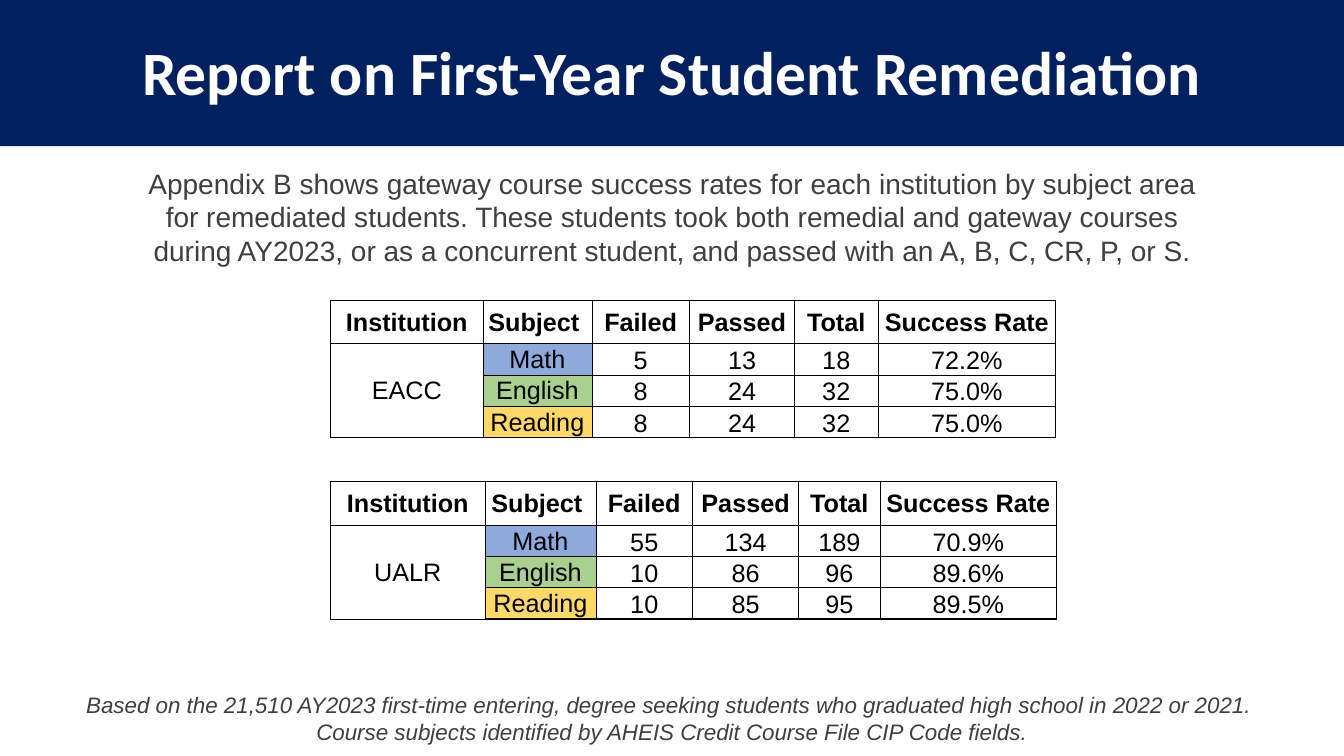
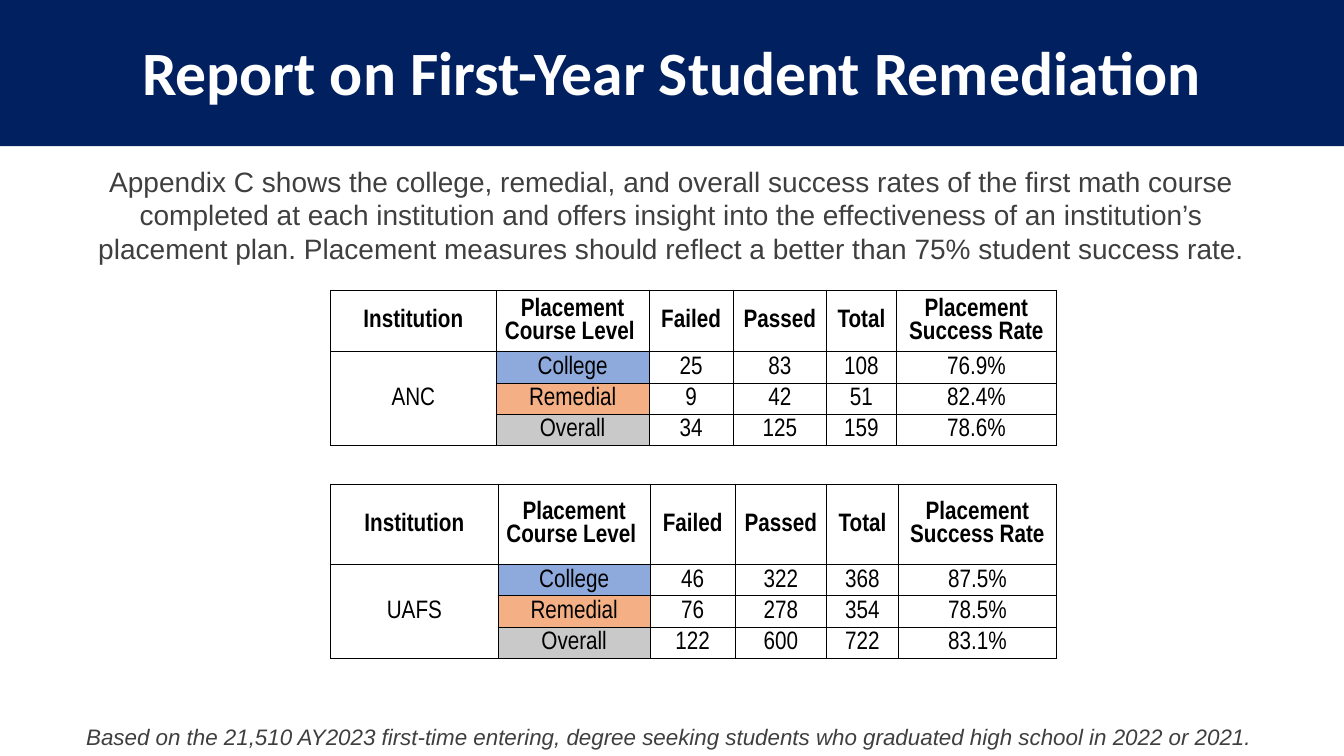
from dataclasses import dataclass

from lxml import etree
from pptx import Presentation
from pptx.dml.color import RGBColor
from pptx.enum.shapes import MSO_SHAPE
from pptx.enum.text import MSO_ANCHOR, PP_ALIGN
from pptx.oxml.ns import qn
from pptx.util import Inches, Pt

RECT = MSO_SHAPE.RECTANGLE
TOP, MIDDLE, BOTTOM = MSO_ANCHOR.TOP, MSO_ANCHOR.MIDDLE, MSO_ANCHOR.BOTTOM
CENTER = PP_ALIGN.CENTER


@dataclass(frozen=True)
class Theme:
    navy: str = "002060"
    white: str = "FFFFFF"
    gray: str = "3F3F3F"
    black: str = "000000"
    blue: str = "8EA9DB"
    green: str = "A9D08E"
    gold: str = "FFD966"
    orange: str = "F4B084"
    silver: str = "C9C9C9"
    sans: str = "Arial"
    narrow: str = "Arial Narrow"
    head: str = "Calibri"
    title: int = 44
    body: int = 20
    cell: int = 18
    note: int = 16
    thin: float = 0.5
    thick: float = 1


THEME = Theme()
WIDE, HIGH = 13.33, 7.5
LEFT = 3.28
PAD = {"margin_left": 0.01, "margin_right": 0.01, "margin_top": 0.01, "margin_bottom": 0}
INSET = {"margin_left": 0.1, "margin_right": 0.1, "margin_top": 0.05, "margin_bottom": 0}
TITLE = {"name": THEME.head, "size": Pt(THEME.title), "bold": True}
BODY = {"name": THEME.sans, "size": Pt(THEME.body)}
NOTE = {"name": THEME.sans, "size": Pt(THEME.note), "italic": True}
COHORT = ("Based on the 21,510 AY2023 first-time entering, degree seeking students "
          "who graduated high school in 2022 or 2021. ")


def apply(item, values):
    for key, value in values.items():
        setattr(item, key, value)


def inset(item, values):
    apply(item, {key: Inches(value) for key, value in values.items()})


def write(frame, lines, look, color):
    for index, line in enumerate(lines):
        para = frame.add_paragraph() if index else frame.paragraphs[0]
        para.alignment = CENTER
        run = para.add_run()
        run.text = line
        apply(run.font, look)
        run.font.color.rgb = RGBColor.from_string(color)


def add_band(slide, box, text):
    band = slide.shapes.add_shape(RECT, *map(Inches, box))
    band.shadow.inherit = False
    band.fill.solid()
    band.fill.fore_color.rgb = RGBColor.from_string(THEME.navy)
    band.line.fill.background()
    frame = band.text_frame
    apply(frame, {"word_wrap": True, "vertical_anchor": MIDDLE})
    inset(frame, INSET)
    write(frame, [text], TITLE, THEME.white)
    frame.paragraphs[0].line_spacing = 0.9


def add_text(slide, box, lines, look):
    frame = slide.shapes.add_textbox(*map(Inches, box)).text_frame
    apply(frame, {"word_wrap": True, "vertical_anchor": TOP})
    write(frame, lines, look, THEME.gray)


def add_edge(cell, side, width):
    props = cell._tc.get_or_add_tcPr()
    line = etree.SubElement(props, qn(f"a:ln{side}"), w=str(Pt(width)))
    fill = etree.SubElement(line, qn("a:solidFill"))
    etree.SubElement(fill, qn("a:srgbClr"), val=THEME.black)


def add_grid(slide, top, sizes, kind, school, data):
    heads, levels = kind["heads"], kind["levels"]
    rows = [heads] + [[school if not index else "", name, *values]
                      for index, ((name, _), values) in enumerate(zip(levels, data))]
    tall = [sizes["head"]] + [kind["row"]] * len(levels)
    box = LEFT, top, sum(sizes["cols"]), sum(tall)
    grid = slide.shapes.add_table(len(rows), len(heads), *map(Inches, box)).table
    apply(grid, {"first_row": False, "horz_banding": False})
    for col, width in zip(grid.columns, sizes["cols"]):
        col.width = Inches(width)
    for row, height in zip(grid.rows, tall):
        row.height = Inches(height)
    last, end = len(rows) - 1, len(heads) - 1
    for y, row in enumerate(rows):
        for x, text in enumerate(row):
            cell = grid.cell(y, x)
            heavy = {"L": x == 0, "R": x == end, "T": y < 2, "B": y in (0, last)}
            for side, bold in heavy.items():
                add_edge(cell, side, kind["edge"] if bold else THEME.thin)
            if y and x == 1:
                cell.fill.solid()
                cell.fill.fore_color.rgb = RGBColor.from_string(levels[y - 1][1])
            else:
                cell.fill.background()
            inset(cell, PAD)
            cell.vertical_anchor = kind["anchor"] if y and x > 1 else MIDDLE
            if text:
                look = {"name": kind["font"], "size": Pt(THEME.cell), "bold": y == 0}
                write(cell.text_frame, [text], look, THEME.black)
    grid.cell(1, 0).merge(grid.cell(last, 0))


def add_page(deck, page):
    slide = deck.slides.add_slide(deck.slide_layouts[6])
    add_band(slide, (0, 0, WIDE, 1.45), "Report on First-Year Student Remediation")
    add_text(slide, page["box"], [page["intro"]], BODY)
    for top, sizes, school, data in page["grids"]:
        add_grid(slide, top, sizes, page["kind"], school, data)
    add_text(slide, page["foot"], page["notes"], NOTE)


SUBJECT = {
    "heads": ["Institution", "Subject ", "Failed", "Passed", "Total", "Success Rate"],
    "levels": [("Math", THEME.blue), ("English", THEME.green), ("Reading", THEME.gold)],
    "row": 0.24, "edge": THEME.thick, "font": THEME.sans, "anchor": BOTTOM,
}
PLACING = {
    "heads": ["Institution", "Placement Course Level ", "Failed", "Passed", "Total",
              "Placement Success Rate"],
    "levels": [("College", THEME.blue), ("Remedial", THEME.orange),
               ("Overall", THEME.silver)],
    "row": 0.31, "edge": THEME.thin, "font": THEME.narrow, "anchor": MIDDLE,
}
PAGES = [
    {
        "box": (1.32, 1.6, 10.7, 1.41),
        "intro": "Appendix B shows gateway course success rates for each institution by "
                 "subject area for remediated students. These students took both remedial "
                 "and gateway courses during AY2023, or as a concurrent student, and passed "
                 "with an A, B, C, CR, P, or S.",
        "kind": SUBJECT,
        "grids": [
            (2.98, {"head": 0.43, "cols": [1.51, 1.08, 0.97, 1.04, 0.83, 1.76]}, "EACC",
             [("5", "13", "18", "72.2%"), ("8", "24", "32", "75.0%"),
              ("8", "24", "32", "75.0%")]),
            (4.78, {"head": 0.43, "cols": [1.53, 1.1, 0.96, 1.05, 0.81, 1.75]}, "UALR",
             [("55", "134", "189", "70.9%"), ("10", "86", "96", "89.6%"),
              ("10", "85", "95", "89.5%")]),
        ],
        "foot": (0, 6.81, WIDE, 0.64),
        "notes": [COHORT, "Course subjects identified by AHEIS Credit Course File CIP "
                          "Code fields."],
    },
    {
        "box": (0.8, 1.58, 11.72, 1.11),
        "intro": "Appendix C shows the college, remedial, and overall success rates of the "
                 "first math course completed at each institution and offers insight into "
                 "the effectiveness of an institution’s placement plan. Placement measures "
                 "should reflect a better than 75% student success rate.",
        "kind": PLACING,
        "grids": [
            (2.88, {"head": 0.6, "cols": [1.64, 1.52, 0.83, 0.93, 0.69, 1.59]}, "ANC",
             [("25", "83", "108", "76.9%"), ("9", "42", "51", "82.4%"),
              ("34", "125", "159", "78.6%")]),
            (4.8, {"head": 0.8, "cols": [1.66, 1.51, 0.84, 0.91, 0.71, 1.57]}, "UAFS",
             [("46", "322", "368", "87.5%"), ("76", "278", "354", "78.5%"),
              ("122", "600", "722", "83.1%")]),
        ],
        "foot": (0, 7.13, WIDE, 0.37),
        "notes": [COHORT],
    },
]


def main():
    deck = Presentation()
    apply(deck, {"slide_width": Inches(WIDE), "slide_height": Inches(HIGH)})
    for page in PAGES:
        add_page(deck, page)
    deck.save("out.pptx")


if __name__ == "__main__":
    main()
